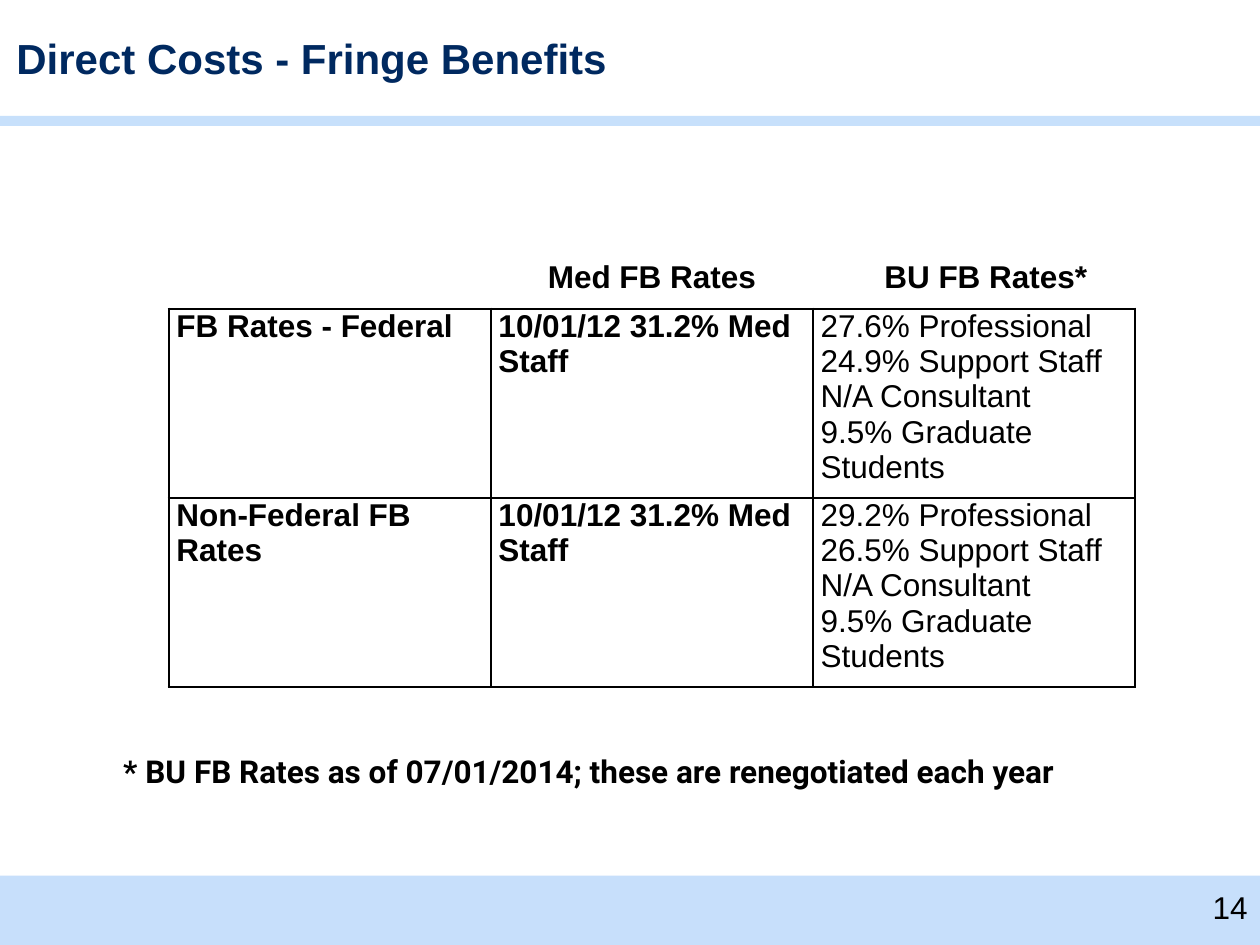
"""Build the fringe benefits slide with its table of rates."""
from lxml import etree
from pptx import Presentation
from pptx import util as u
from pptx.dml import color
from pptx.enum import shapes, text
from pptx.oxml import ns

HUES = {"foot": "C7DFFB", "rule": "C7E0FB", "title": "002960", "ink": "000000"}
ALIGN = text.PP_ALIGN


def style(par, hue="ink", align=ALIGN.LEFT, **form):
    """Format one paragraph."""
    par.alignment = align
    for key, val in {"name": "Arial", "size": u.Pt(18), "bold": False, **form}.items():
        setattr(par.font, key, val)
    par.font.color.rgb = color.RGBColor.from_string(HUES[hue])


def edge(cell, width):
    """Draw the four borders of a cell."""
    props = cell._tc.get_or_add_tcPr()
    for side in ("lnL", "lnR", "lnT", "lnB"):
        line = etree.SubElement(props, ns.qn(f"a:{side}"), w=str(width))
        fill = etree.SubElement(line, ns.qn("a:solidFill"))
        etree.SubElement(fill, ns.qn("a:srgbClr"), val=HUES["ink"])


deck = Presentation()
deck.slide_width, deck.slide_height = u.Inches(10), u.Inches(7.5)
slide = deck.slides.add_slide(deck.slide_layouts[5])

for hue, top, high in (("foot", 6.95, 0.55), ("rule", 0.92, 0.08)):
    band = slide.shapes.add_shape(
        shapes.MSO_SHAPE.RECTANGLE, 0, u.Inches(top), u.Inches(10), u.Inches(high))
    band.shadow.inherit = False
    band.fill.solid()
    band.fill.fore_color.rgb = color.RGBColor.from_string(HUES[hue])
    band.line.fill.background()

title = slide.shapes.title
place = {"left": 0.13, "top": 0.26, "width": 8.55, "height": 0.4}
for key, val in place.items():
    setattr(title, key, u.Inches(val))
frame = title.text_frame
frame.text = "Direct Costs - Fringe Benefits"
frame.vertical_anchor = text.MSO_ANCHOR.MIDDLE
for side in ("left", "top", "right", "bottom"):
    setattr(frame, f"margin_{side}", 0)
style(frame.paragraphs[0], "title", size=u.Pt(24), bold=True)

labels = [
    ("Med FB Rates", 4.25, 1.99, 2, {"bold": True}),
    ("BU FB Rates*", 6.92, 1.99, 1.92, {"bold": True}),
    ("* BU FB Rates as of 07/01/2014; these are renegotiated each year",
     0.88, 5.92, 8.5, {"bold": True, "name": "Roboto"}),
    ("14", 0, 7, 10, {"align": ALIGN.RIGHT}),
]
for words, left, top, wide, form in labels:
    box = slide.shapes.add_textbox(
        u.Inches(left), u.Inches(top), u.Inches(wide), u.Inches(0.4))
    box.text_frame.word_wrap = True
    box.text_frame.text = words
    style(box.text_frame.paragraphs[0], **form)

staff = "10/01/12 31.2% Med Staff"
shared = "N/A Consultant\n9.5% Graduate Students"
rates = [
    ("FB Rates - Federal", staff, f"27.6% Professional\n24.9% Support Staff\n{shared}"),
    ("Non-Federal FB Rates", staff, f"29.2% Professional\n26.5% Support Staff\n{shared}"),
]
table = slide.shapes.add_table(
    2, 3, u.Inches(1.34), u.Inches(2.45), u.Inches(7.67), u.Inches(3)).table
table.first_row = table.horz_banding = False
pads = {"margin_left": 0.06, "margin_right": 0.06, "margin_top": 0, "margin_bottom": 0}
for row, items in zip(table.rows, rates):
    for col, (cell, words) in enumerate(zip(row.cells, items)):
        for key, val in pads.items():
            setattr(cell, key, u.Inches(val))
        cell.text = words
        for par in cell.text_frame.paragraphs:
            style(par, bold=col < 2)
        edge(cell, u.Pt(1.5))
        cell.fill.background()

deck.save("out.pptx")
